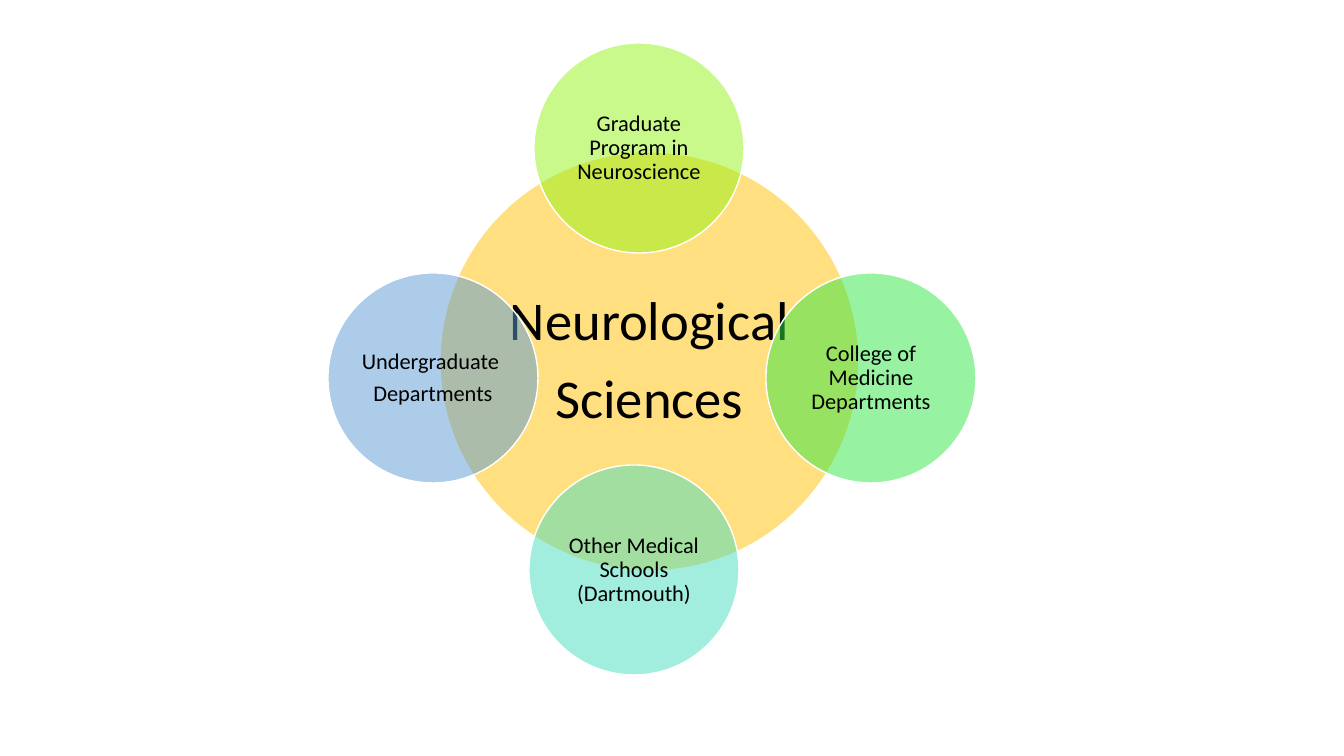
from dataclasses import dataclass

from lxml import etree
from pptx import Presentation
from pptx.dml.color import RGBColor
from pptx.enum.shapes import MSO_SHAPE
from pptx.enum.text import MSO_ANCHOR, PP_ALIGN
from pptx.oxml.ns import qn
from pptx.util import Pt

EMU_PER_INCH = 914400
PX_PER_INCH = 100.8


@dataclass(frozen=True)
class Theme:
    font: str = "Calibri"
    text: str = "000000"
    outline: str = "FFFFFF"
    hub: str = "FFC000"
    graduate: str = "94F319"
    college: str = "30E845"
    schools: str = "46DEBF"
    undergraduate: str = "5B9BD5"
    hub_size: int = 39
    partner_size: int = 16


theme = Theme()


def px(length):
    return round(length * EMU_PER_INCH / PX_PER_INCH)


deck = Presentation()
deck.slide_width, deck.slide_height = px(1344), px(756)
page = deck.slides.add_slide(deck.slide_layouts[6])

# Central circle first, then its partners clockwise from the top
HUB, PARTNER = 419, 210
circles = [
    (440, 152, HUB, theme.hub, theme.hub_size, 5, ["Neurological ", "Sciences"]),
    (534, 43, PARTNER, theme.graduate, theme.partner_size, 2,
     ["Graduate Program in Neuroscience"]),
    (766, 273, PARTNER, theme.college, theme.partner_size, 2,
     ["College of Medicine Departments"]),
    (529, 465, PARTNER, theme.schools, theme.partner_size, 2,
     ["Other Medical Schools (Dartmouth)"]),
    (328, 273, PARTNER, theme.undergraduate, theme.partner_size, 2,
     ["Undergraduate ", "Departments"]),
]

for left, top, diameter, color, size, inset, lines in circles:
    # Half-transparent disc with a thin outline
    circle = page.shapes.add_shape(
        MSO_SHAPE.OVAL, px(left), px(top), px(diameter), px(diameter))
    circle.shadow.inherit = False
    circle.fill.solid()
    circle.fill.fore_color.rgb = RGBColor.from_string(color)
    fill_color = circle.fill._xPr.find(qn("a:solidFill"))[0]
    etree.SubElement(fill_color, qn("a:alpha"), val="50000")
    circle.line.color.rgb = RGBColor.from_string(theme.outline)
    circle.line.width = Pt(1)

    # Label
    frame = circle.text_frame
    frame.word_wrap = True
    frame.vertical_anchor = MSO_ANCHOR.MIDDLE
    frame.margin_left = frame.margin_right = px(inset)
    frame.margin_top = frame.margin_bottom = px(inset)
    frame.text = "\n".join(lines)
    for para in frame.paragraphs:
        para.alignment = PP_ALIGN.CENTER
        para.line_spacing = 0.9
        para.space_after = Pt(round(size * 0.35, 1))
        para.font.name = theme.font
        para.font.size = Pt(size)
        para.font.color.rgb = RGBColor.from_string(theme.text)

deck.save("out.pptx")
